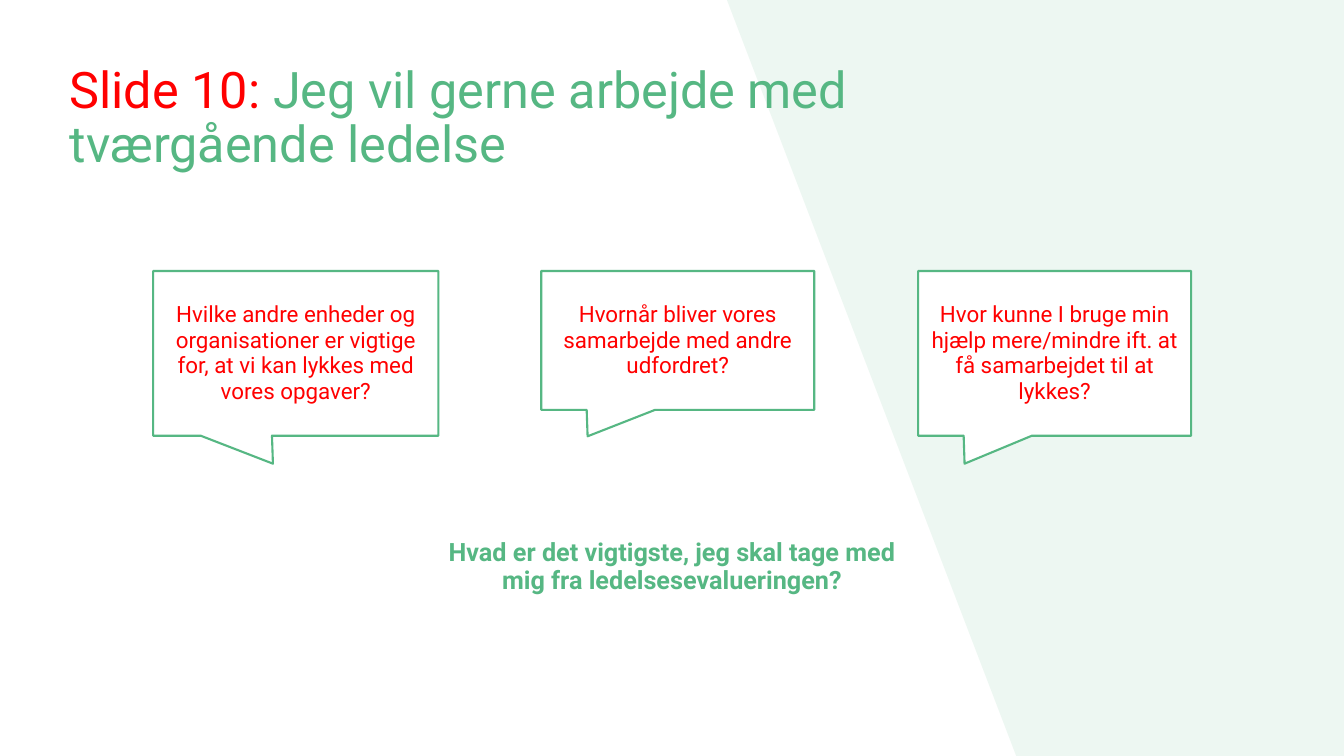
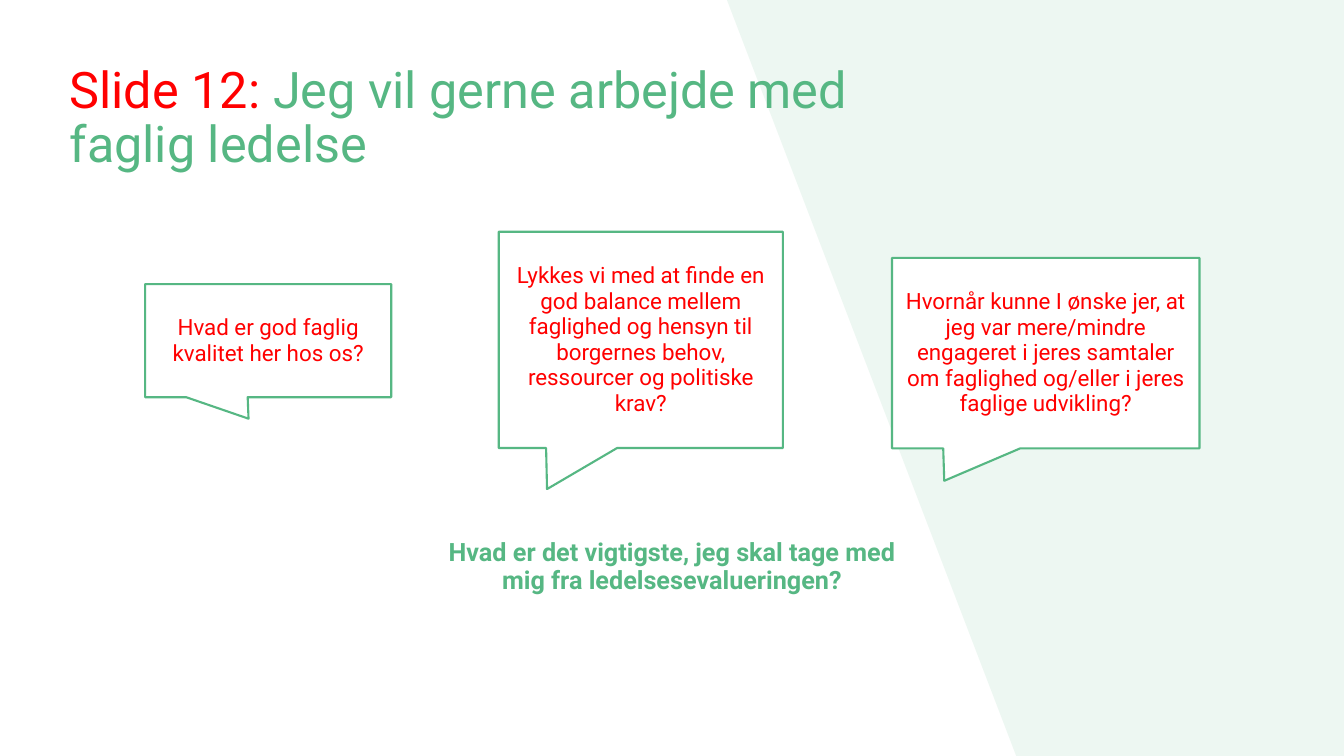
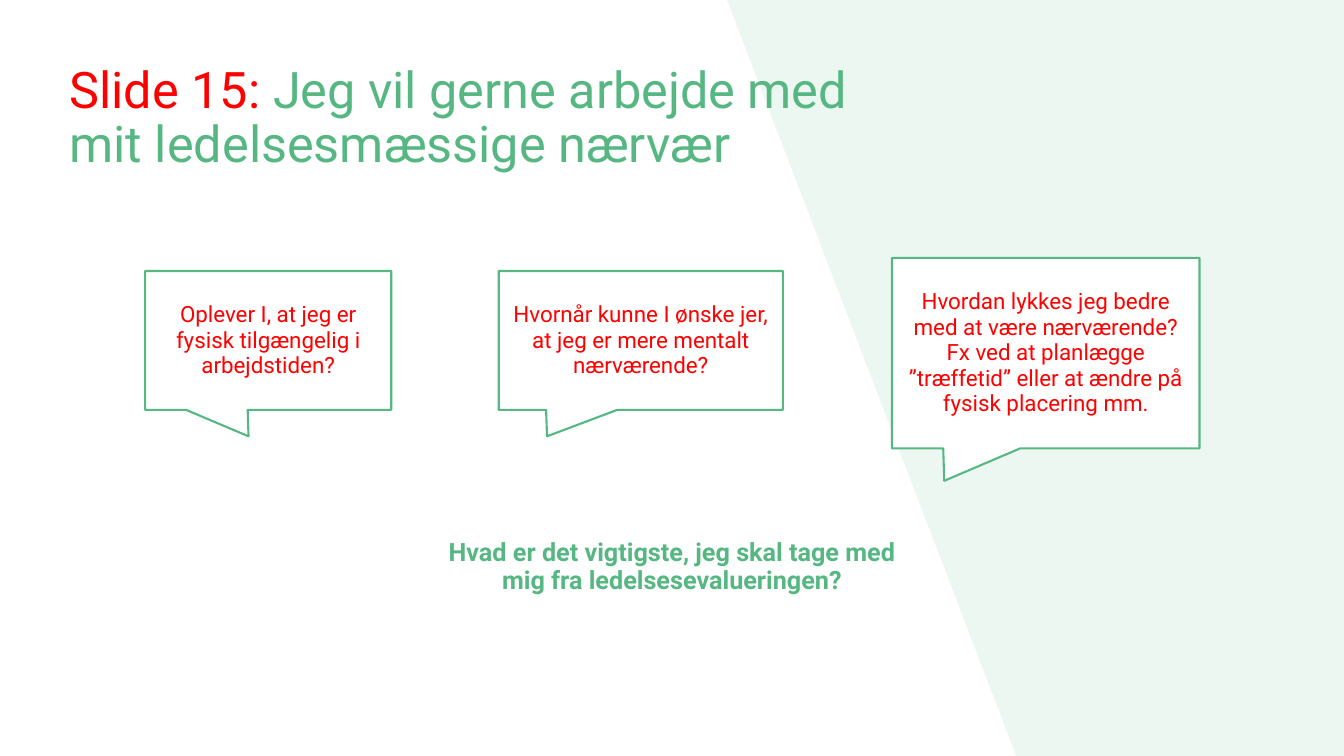
from dataclasses import dataclass

from lxml.etree import SubElement
from pptx import Presentation
from pptx.dml.color import RGBColor
from pptx.enum.shapes import MSO_SHAPE
from pptx.enum.text import MSO_ANCHOR, MSO_AUTO_SIZE, PP_ALIGN
from pptx.oxml.ns import qn
from pptx.slide import Slide
from pptx.text.text import TextFrame
from pptx.util import Cm, Pt

COLORS = {"green": "56B783", "red": "FF0000", "white": "FFFFFF"}
FONT = "Roboto"
WIDTH, HEIGHT = Cm(33.87), Cm(19.05)
CLOSING = "Hvad er det vigtigste, jeg skal tage med mig fra ledelsesevalueringen?"


@dataclass
class Column:
    left: float
    width: float
    tail_x: float


@dataclass
class Bubble:
    column: Column
    top: float
    lines: int
    text: str
    tail_y: float = 0.69

    @property
    def height(self) -> float:
        """Room for the text and one free line above and below it."""
        return 0.65 * (self.lines + 2) + 0.25


@dataclass
class Page:
    label: str
    title: str
    bubbles: list[Bubble]
    title_width: float = 22


WIDE = [Column(3.86, 7.19, -0.08), Column(13.64, 6.88, -0.33), Column(23.14, 6.88, -0.33)]
MIXED = [Column(3.66, 6.2, -0.08), Column(12.57, 7.16, -0.33), Column(22.48, 7.75, -0.33)]

PAGES = [
    Page("Slide 10:", "Jeg vil gerne arbejde med tværgående ledelse", [
        Bubble(WIDE[0], 6.83, 4, "Hvilke andre enheder og organisationer er vigtige for, "
               "at vi kan lykkes med vores opgaver?", 0.67),
        Bubble(WIDE[1], 6.83, 3, "Hvornår bliver vores samarbejde med andre udfordret?"),
        Bubble(WIDE[2], 6.83, 4, "Hvor kunne I bruge min hjælp mere/mindre ift. at få "
               "samarbejdet til at lykkes?", 0.67),
    ], title_width=26.6),
    Page("Slide 12:", "Jeg vil gerne arbejde med faglig ledelse", [
        Bubble(MIXED[0], 7.16, 2, "Hvad er god faglig kvalitet her hos os?"),
        Bubble(MIXED[1], 5.84, 6, "Lykkes vi med at finde en god balance mellem faglighed "
               "og hensyn til borgernes behov, ressourcer og politiske krav?"),
        Bubble(MIXED[2], 6.5, 5, "Hvornår kunne I ønske jer, at jeg var mere/mindre engageret "
               "i jeres samtaler om faglighed og/eller i jeres faglige udvikling?", 0.67),
    ]),
    Page("Slide 15:", "Jeg vil gerne arbejde med mit ledelsesmæssige nærvær", [
        Bubble(MIXED[0], 6.83, 3, "Oplever I, at jeg er fysisk tilgængelig i arbejdstiden?"),
        Bubble(MIXED[1], 6.83, 3, "Hvornår kunne I ønske jer, at jeg er mere mentalt "
               "nærværende?"),
        Bubble(MIXED[2], 6.5, 5, "Hvordan lykkes jeg bedre med at være nærværende? Fx ved at "
               "planlægge ”træffetid” eller at ændre på fysisk placering mm.", 0.67),
    ]),
]


def rgb(name: str) -> RGBColor:
    return RGBColor.from_string(COLORS[name])


def write(tf: TextFrame, *runs: tuple[str, str], size: float, bold: bool = False,
          align: PP_ALIGN = PP_ALIGN.CENTER, spacing: float = 0.95,
          anchor: MSO_ANCHOR = MSO_ANCHOR.TOP) -> None:
    """Fill a frame with one paragraph made of (text, colour name) runs."""
    tf.word_wrap = True
    tf.auto_size = MSO_AUTO_SIZE.NONE
    tf.vertical_anchor = anchor
    p = tf.paragraphs[0]
    p.alignment = align
    p.line_spacing = spacing
    for text, color in runs:
        r = p.add_run()
        r.text = text
        r.font.name = FONT
        r.font.size = Pt(size)
        r.font.bold = bold
        r.font.color.rgb = rgb(color)


def add_band(s: Slide) -> None:
    """Put the pale slanted band on the layout that the slide uses."""
    fb = s.shapes.build_freeform(Cm(18.32), 0)
    fb.add_line_segments([(Cm(25.61), HEIGHT), (WIDTH, HEIGHT), (WIDTH, 0)])
    sp = fb.convert_to_shape()
    sp.shadow.inherit = False
    sp.line.fill.background()
    sp.fill.solid()
    sp.fill.fore_color.rgb = rgb("green")
    color = sp._element.spPr.find(qn("a:solidFill"))[0]
    SubElement(color, qn("a:alpha"), val="10000")
    s.slide_layout.shapes._spTree.insert(2, sp._element)


def add_title(s: Slide, page: Page) -> None:
    sp = s.shapes.title
    sp.left, sp.top, sp.width, sp.height = Cm(1.5), Cm(1.5), Cm(page.title_width), Cm(2.8)
    write(sp.text_frame, (page.label + " ", "red"), (page.title, "green"),
          size=36, align=PP_ALIGN.LEFT, spacing=0.9)


def add_bubble(s: Slide, b: Bubble) -> None:
    sp = s.shapes.add_shape(MSO_SHAPE.RECTANGULAR_CALLOUT, Cm(b.column.left), Cm(b.top),
                            Cm(b.column.width), Cm(b.height))
    sp.adjustments[0] = b.column.tail_x
    sp.adjustments[1] = b.tail_y
    sp.shadow.inherit = False
    sp.fill.solid()
    sp.fill.fore_color.rgb = rgb("white")
    sp.line.color.rgb = rgb("green")
    sp.line.width = Pt(1.5)
    write(sp.text_frame, (b.text, "red"), size=16, anchor=MSO_ANCHOR.MIDDLE)


def add_closing(s: Slide) -> None:
    width = Cm(12.52)
    sp = s.shapes.add_textbox((WIDTH - width) // 2, Cm(13.44), width, Cm(1.73))
    write(sp.text_frame, (CLOSING, "green"), size=18, bold=True)


def main() -> None:
    prs = Presentation()
    prs.slide_width, prs.slide_height = WIDTH, HEIGHT
    layout = prs.slide_layouts[5]
    for i, page in enumerate(PAGES):
        s = prs.slides.add_slide(layout)
        if i == 0:
            add_band(s)
        add_title(s, page)
        for bubble in page.bubbles:
            add_bubble(s, bubble)
        add_closing(s)
    prs.save("out.pptx")


if __name__ == "__main__":
    main()
